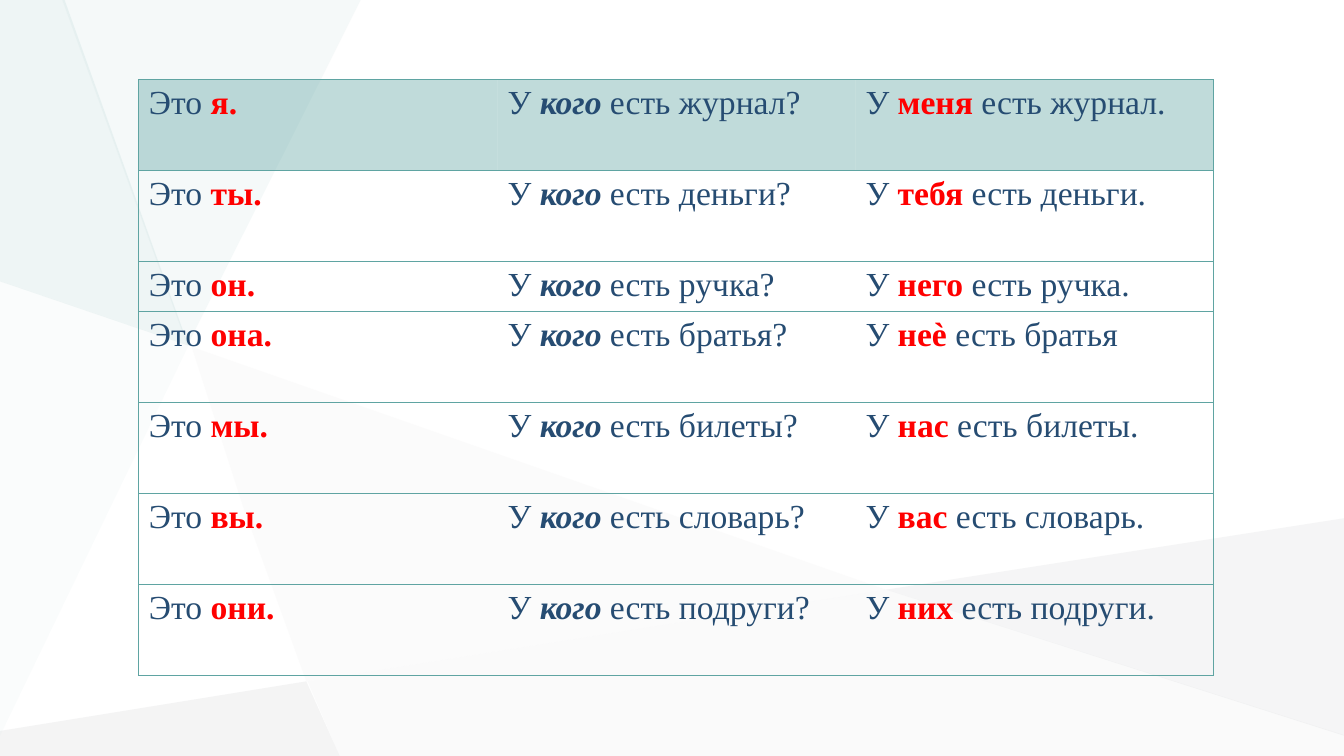
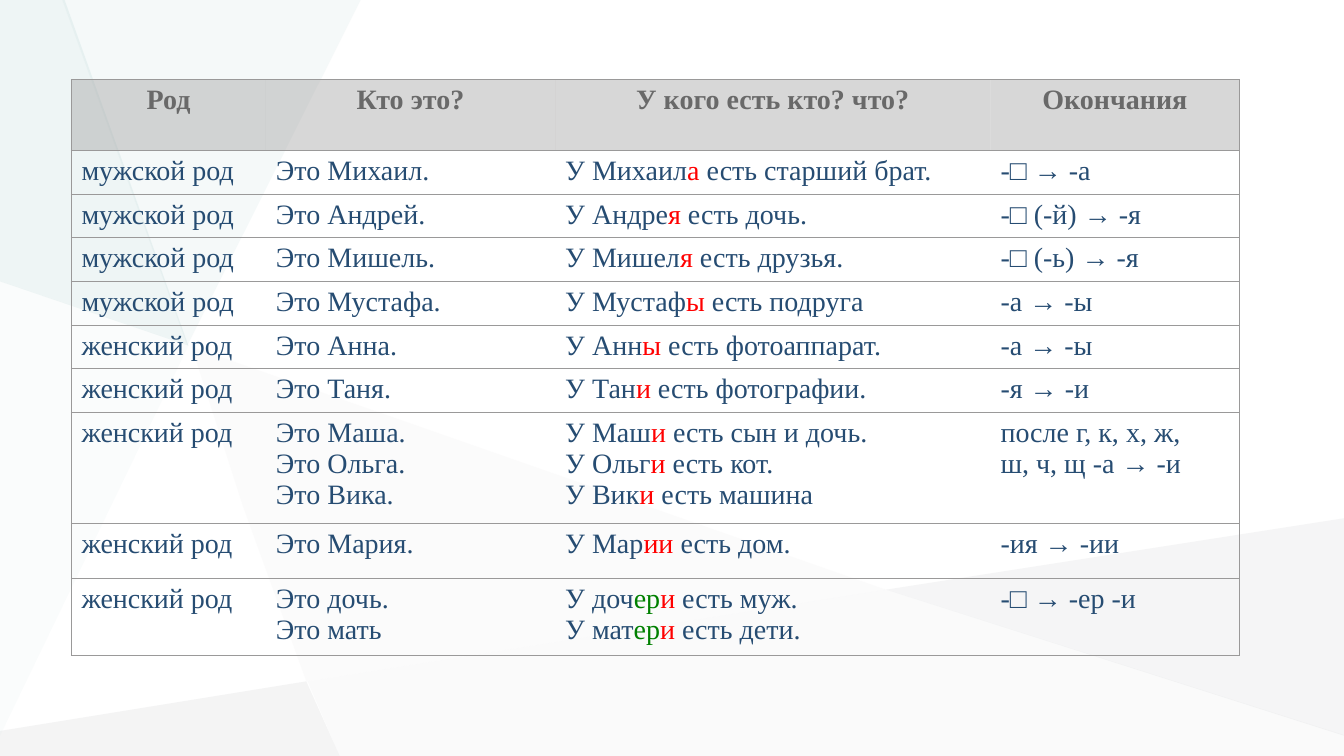
from dataclasses import dataclass

from pptx import Presentation
from pptx.dml.color import RGBColor
from pptx.enum.text import PP_ALIGN
from pptx.oxml.ns import qn
from pptx.oxml.xmlchemy import OxmlElement
from pptx.util import Cm, Pt


@dataclass(frozen=True)
class Theme:
    font: str = "Times New Roman"
    ink: str = "264C72"
    red: str = "FF0000"
    green: str = "008000"
    border_pt: float = 0.75
    header_opacity: int = 40
    plain_style: str = "{2D5ABB26-0587-4C30-8999-92F81FD0307C}"


T = Theme()

# Mark at the start of a text piece: colour, bold, italic
MARKS = {
    "*": (T.red, True, False),
    "_": (None, True, True),
    "^": (T.red, False, False),
    "~": (T.green, False, False),
}

# Background facets: colour, opacity in percent, corners in cm
FACETS = [
    ("F3F2F2", 26, [(4.83, 8.74), (6.12, 12.75), (7.72, 17.17), (22.33, 14.86)]),
    ("B6B8BA", 15, [(7.72, 17.17), (0, 18.42), (0, 19.05), (8.56, 19.05)]),
    ("E0EDED", 31, [(9.09, 0), (1.57, 0), (4.72, 8.71)]),
    ("C6C8CA", 17, [(33.87, 13.06), (22.33, 14.86), (33.87, 18.54)]),
    ("B6B8BA", 6, [(22.33, 14.86), (7.75, 17.17), (8.56, 19.05),
                   (33.87, 19.05), (33.87, 18.52)]),
    ("C1DBDB", 27, [(1.63, 0), (0, 0), (0, 7.09), (4.75, 8.71)]),
    ("C1DBDB", 8, [(0, 7.09), (0, 18.54), (4.75, 8.71)]),
]

# Pronoun, its genitive, the thing owned, closing mark
PRONOUNS = [
    ("я", "меня", "журнал", "."),
    ("ты", "тебя", "деньги", "."),
    ("он", "него", "ручка", "."),
    ("она", "неѐ", "братья", ""),
    ("мы", "нас", "билеты", "."),
    ("вы", "вас", "словарь", "."),
    ("они", "них", "подруги", "."),
]

MASC, FEM = "мужской род", "женский род"
GENDERS = [
    ("Род", "Кто это?", "У кого есть кто? что?", "Окончания"),
    (MASC, "Это Михаил.", "У Михаил|^а| есть старший брат.", "-□ → -а"),
    (MASC, "Это Андрей.", "У Андре|^я| есть дочь.", "-□ (-й) → -я"),
    (MASC, "Это Мишель.", "У Мишел|^я| есть друзья.", "-□ (-ь) → -я"),
    (MASC, "Это Мустафа.", "У Мустаф|^ы| есть подруга", "-а → -ы"),
    (FEM, "Это Анна.", "У Анн|^ы| есть фотоаппарат.", "-а → -ы"),
    (FEM, "Это Таня.", "У Тан|^и| есть фотографии.", "-я → -и"),
    (FEM, "Это Маша.\nЭто Ольга.\nЭто Вика.",
     "У Маш|^и| есть сын и дочь.\nУ Ольг|^и| есть кот.\nУ Вик|^и| есть машина",
     "после г, к, х, ж,\nш, ч, щ -а → -и"),
    (FEM, "Это Мария.", "У Мар|^ии| есть дом.", "-ия → -ии"),
    (FEM, "Это дочь.\nЭто мать",
     "У доч|~ер|^и| есть муж.\nУ мат|~ер|^и| есть дети.", "-□ → -ер -и"),
]

TABLES = [
    dict(
        rows=[(f"Это |*{who}.", f"У |_кого| есть {thing}?",
               f"У |*{whose}| есть {thing}{end}")
              for who, whose, thing, end in PRONOUNS],
        left=3.5, top=2.01, widths=[9.04, 9.02, 9.02],
        heights=[2.29, 2.29, 1.27] + [2.29] * 4,
        size=24, border="5FA4A2", header_fill="63A6A4", header_ink=None),
    dict(
        rows=GENDERS, left=1.8, top=2.01, widths=[4.9, 7.29, 10.97, 6.27],
        heights=[1.78] + [1.1] * 6 + [2.79, 1.39, 1.94],
        size=20, border="9A9999", header_fill="9D9C9C", header_ink="696969"),
]


def fill_solid(fill, props, color, opacity):
    fill.solid()
    fill.fore_color.rgb = RGBColor.from_string(color)
    alpha = OxmlElement("a:alpha")
    alpha.set("val", str(opacity * 1000))
    props.find(qn("a:solidFill")).find(qn("a:srgbClr")).append(alpha)


def add_border(props, side, color):
    ln = OxmlElement(f"a:ln{side}")
    ln.set("w", str(Pt(T.border_pt)))
    solid, rgb = OxmlElement("a:solidFill"), OxmlElement("a:srgbClr")
    rgb.set("val", color)
    solid.append(rgb)
    ln.append(solid)
    props.append(ln)


def write_cell(cell, text, size, header_ink):
    tf = cell.text_frame
    for i, line in enumerate(text.split("\n")):
        p = tf.paragraphs[0] if i == 0 else tf.add_paragraph()
        if header_ink:
            p.alignment = PP_ALIGN.CENTER
        for piece in line.split("|"):
            color, bold, italic = MARKS.get(piece[0], (header_ink, bool(header_ink), False))
            r = p.add_run()
            r.text = piece[1:] if piece[0] in MARKS else piece
            r.font.name, r.font.size = T.font, Pt(size)
            r.font.bold, r.font.italic = bold, italic
            r.font.color.rgb = RGBColor.from_string(color or T.ink)


def add_grid(s, rows, left, top, widths, heights, size, border, header_fill, header_ink):
    frame = s.shapes.add_table(len(rows), len(widths), Cm(left), Cm(top),
                               Cm(sum(widths)), Cm(sum(heights)))
    table = frame.table
    table.first_row = bool(header_ink)
    table.horz_banding = False
    frame.element.find(".//" + qn("a:tableStyleId")).text = T.plain_style
    for col, width in zip(table.columns, widths):
        col.width = Cm(width)
    for i, (row, height) in enumerate(zip(rows, heights)):
        table.rows[i].height = Cm(height)
        for j, text in enumerate(row):
            cell = table.cell(i, j)
            props = cell._tc.get_or_add_tcPr()
            # Outer frame and row lines only
            sides = ("L" if j == 0 else "") + ("R" if j == len(row) - 1 else "") + "TB"
            for side in sides:
                add_border(props, side, border)
            if i == 0:
                fill_solid(cell.fill, props, header_fill, T.header_opacity)
            else:
                cell.fill.background()
            write_cell(cell, text, size, header_ink if i == 0 else None)


def add_facet(s, color, opacity, corners):
    points = [(Cm(x), Cm(y)) for x, y in corners]
    builder = s.shapes.build_freeform(*points[0])
    builder.add_line_segments(points[1:], close=True)
    sp = builder.convert_to_shape()
    sp.shadow.inherit = False
    sp.line.fill.background()
    fill_solid(sp.fill, sp.element.spPr, color, opacity)
    return sp


prs = Presentation()
prs.slide_width, prs.slide_height = Cm(33.87), Cm(19.05)
layout = prs.slide_layouts[6]
slides = [prs.slides.add_slide(layout) for _ in TABLES]

# Shared background lives on the layout
for ph in list(layout.placeholders):
    layout.shapes.element.remove(ph.element)
facets = [add_facet(slides[0], *facet) for facet in FACETS]
for sp in facets:
    layout.shapes.element.append(sp.element)

# One table per slide
for s, grid in zip(slides, TABLES):
    add_grid(s, **grid)

prs.save("out.pptx")
